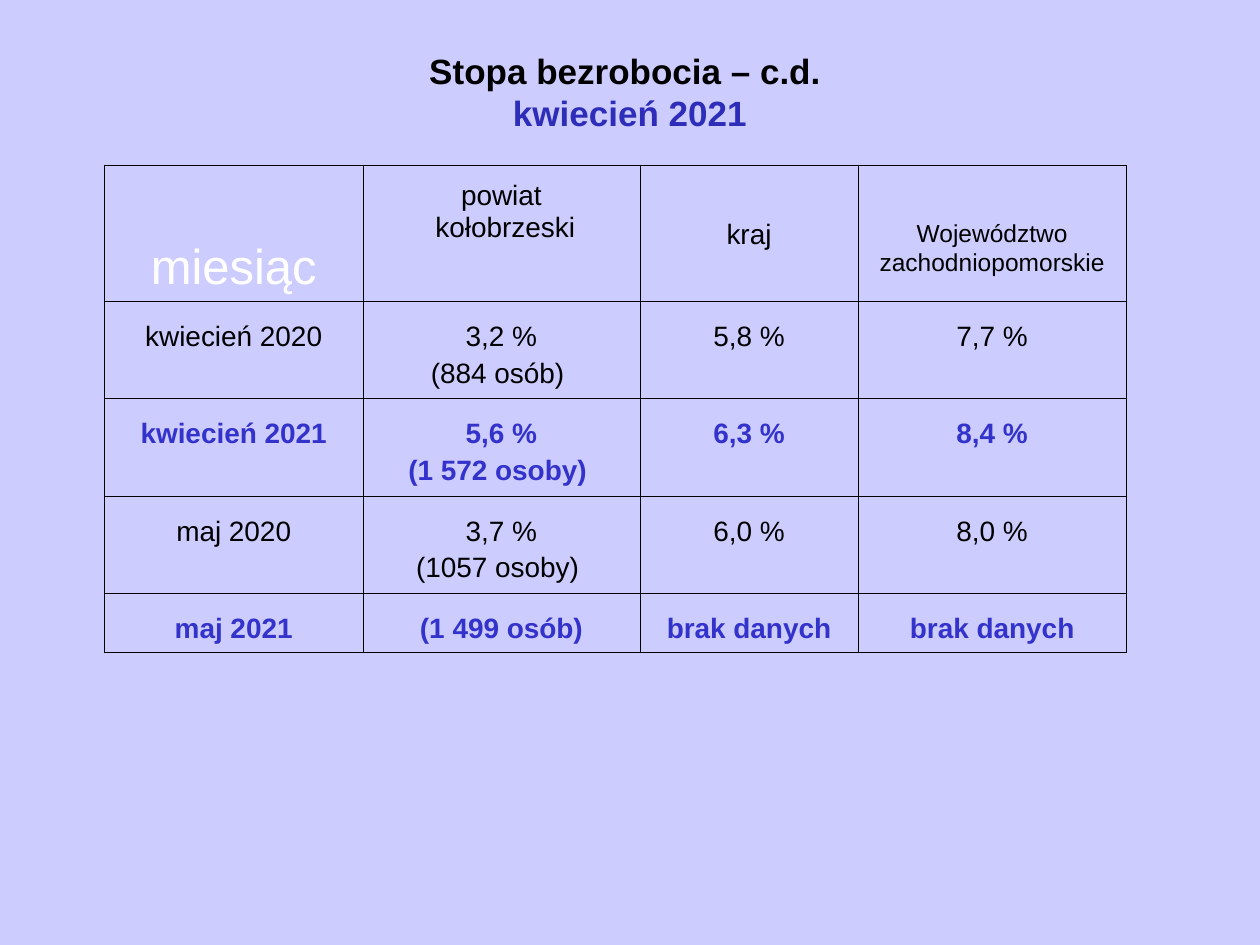
import pptx
import pptx.util
import pptx.dml.color
import pptx.enum.text
import pptx.oxml
import pptx.oxml.ns

Inches = pptx.util.Inches
Pt = pptx.util.Pt
ANCHOR = pptx.enum.text.MSO_ANCHOR
BLACK, WHITE, BLUE, NAVY, LILAC = "000000", "FFFFFF", "3333CC", "2D2DB9", "CCCCFF"


def paint(code):
    return pptx.dml.color.RGBColor.from_string(code)


class Deck:
    """Hold the style and the current slide, and add elements to it."""

    font = "Arial"
    thin, thick = 0.11, 0.23

    def __init__(self, wide, high):
        self.file = pptx.Presentation()
        self.file.slide_width = Inches(wide)
        self.file.slide_height = Inches(high)
        self.slide = self.file.slides.add_slide(self.file.slide_layouts[6])

    def ground(self, color):
        fill = self.slide.background.fill
        fill.solid()
        fill.fore_color.rgb = paint(color)

    def style(self, para, size, color, bold):
        para.alignment = pptx.enum.text.PP_ALIGN.CENTER
        para.font.name = self.font
        para.font.size = Pt(size)
        para.font.bold = bold
        para.font.color.rgb = paint(color)

    def title(self, box, lines, size):
        frame = self.slide.shapes.add_textbox(*map(Inches, box)).text_frame
        frame.word_wrap = True
        frame.vertical_anchor = ANCHOR.MIDDLE
        for i, (text, color) in enumerate(lines):
            para = frame.add_paragraph() if i else frame.paragraphs[0]
            para.text = text
            self.style(para, size, color, True)

    def grid(self, left, top, cols, rows):
        shape = self.slide.shapes.add_table(
            len(rows), len(cols), Inches(left), Inches(top),
            Inches(sum(cols)), Inches(sum(rows)))
        table = shape.table
        table.first_row = table.horz_banding = False
        for col, wide in zip(table.columns, cols):
            col.width = Inches(wide)
        for row, high in zip(table.rows, rows):
            row.height = Inches(high)
        for r in range(len(rows)):
            for c in range(len(cols)):
                outer = {"L": c == 0, "R": c == len(cols) - 1, "T": r == 0, "B": False}
                self.frame(table.cell(r, c), outer)
        return table

    def frame(self, cell, outer):
        cell.fill.background()
        props = cell._tc.get_or_add_tcPr()
        for i, (side, edge) in enumerate(outer.items()):
            width = Pt(self.thick if edge else self.thin)
            props.insert(i, pptx.oxml.parse_xml(
                f'<a:ln{side} {pptx.oxml.ns.nsdecls("a")} w="{width}"><a:solidFill>'
                f'<a:srgbClr val="{BLACK}"/></a:solidFill></a:ln{side}>'))

    def cell(self, cell, text, inset, size=16, color=BLACK, bold=False, gap=6.5, tight=0.81):
        cell.margin_top = Inches(inset)
        cell.text = text
        for para in cell.text_frame.paragraphs:
            para.line_spacing = tight
            para.space_before = Pt(gap)
            self.style(para, size, color, bold)

    def save(self):
        self.file.save("out.pptx")


def main():
    deck = Deck(10, 7.5)
    deck.ground(LILAC)
    deck.title((0.5, 0.14, 9, 1.17),
               [("Stopa bezrobocia – c.d. ", BLACK), ("kwiecień 2021", NAVY)], 20)
    table = deck.grid(0.83, 1.31, [2.05, 2.2, 1.73, 2.13], [1.08, 0.75, 0.75, 0.75, 0.45])

    month = table.cell(0, 0)
    month.vertical_anchor = ANCHOR.BOTTOM
    deck.cell(month, "miesiąc", 0.16, 28, WHITE, gap=0, tight=1.0)
    heads = [("powiat\n kołobrzeski", 0.16, 16), ("kraj", 0.47, 16),
             ("Województwo\nzachodniopomorskie", 0.47, 14)]
    for c, (text, inset, size) in enumerate(heads, 1):
        deck.cell(table.cell(0, c), text, inset, size, gap=4)

    rates = [
        ("kwiecień 2020", "3,2 %\n(884 osób) ", "5,8 %", "7,7 %"),
        ("kwiecień 2021", "5,6 %\n(1 572 osoby) ", "6,3 %", "8,4 %"),
        ("maj 2020", "3,7 %\n(1057 osoby) ", "6,0 %", "8,0 %"),
        ("maj 2021", "(1 499 osób)", "brak danych", "brak danych"),
    ]
    for r, row in enumerate(rates, 1):
        fresh = row[0].endswith("2021")
        for c, text in enumerate(row):
            deck.cell(table.cell(r, c), text, 0.2, color=BLUE if fresh else BLACK, bold=fresh)
    deck.save()


if __name__ == "__main__":
    main()
